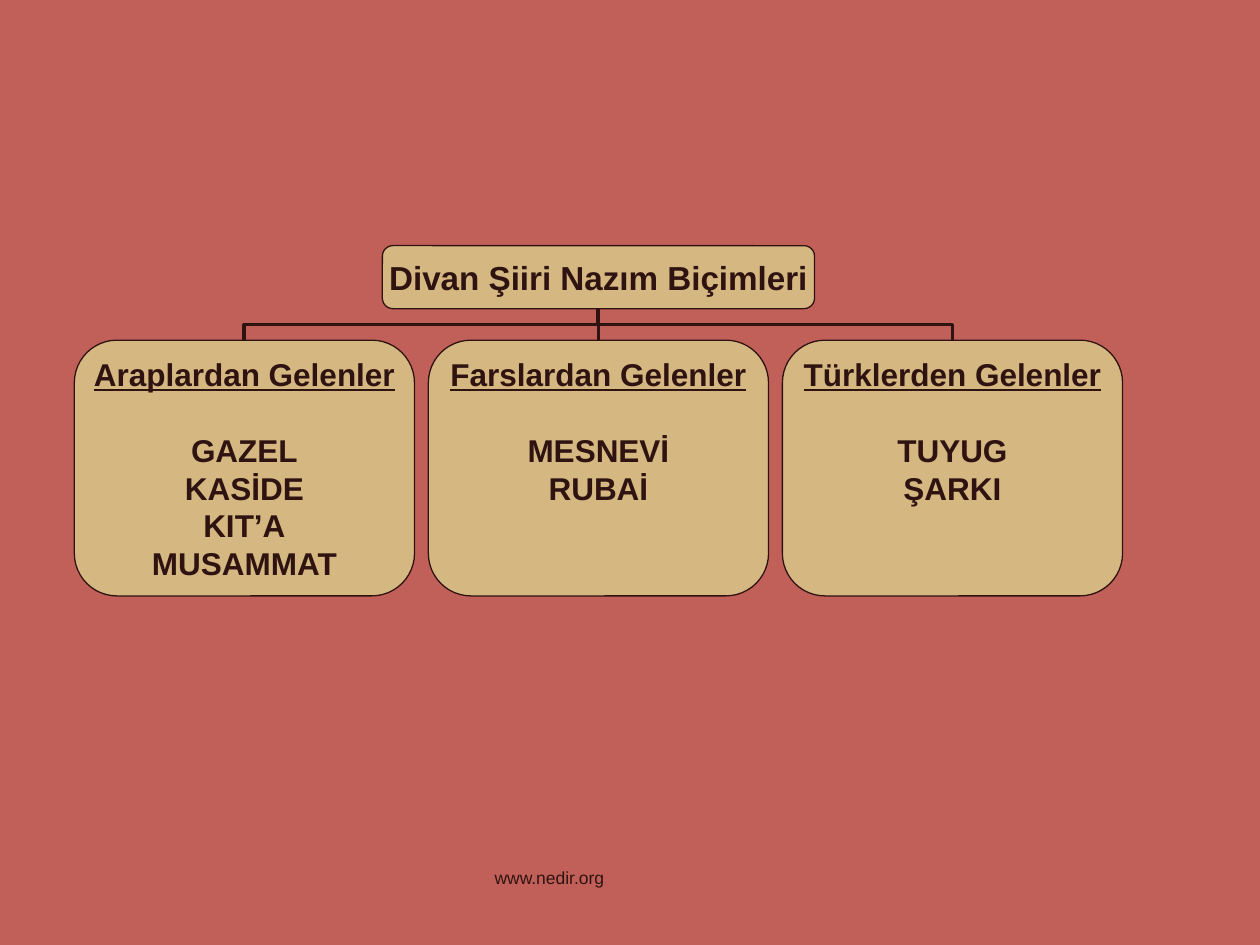
from lxml.etree import SubElement
from pptx import Presentation
from pptx.dml.color import RGBColor
from pptx.enum.shapes import MSO_CONNECTOR, MSO_SHAPE
from pptx.enum.text import MSO_ANCHOR, PP_ALIGN
from pptx.oxml.ns import qn
from pptx.util import Inches, Pt

INK = "2F1311"
SAND = "D5B781"
ROSE = "C16059"
LINE_PITCH = 21.6

BRANCHES = [
    ("Araplardan Gelenler", ["GAZEL", "KASİDE", "KIT’A", "MUSAMMAT"]),
    ("Farslardan Gelenler", ["MESNEVİ", "RUBAİ"]),
    ("Türklerden Gelenler", ["TUYUG", "ŞARKI"]),
]


def color(value):
    return RGBColor.from_string(value)


def write(para, text, size=18, bold=True, underline=False, pitch=None, before=None):
    para.alignment = PP_ALIGN.CENTER
    if pitch:
        para.line_spacing = Pt(pitch)
    if before:
        para.space_before = Pt(before)
    span = para.add_run()
    span.text = text
    span.font.name = "Arial"
    span.font.size = Pt(size)
    span.font.bold = bold
    span.font.underline = underline
    span.font.color.rgb = color(INK)


def add_card(shapes, left, top, width, height, anchor):
    card = shapes.add_shape(MSO_SHAPE.ROUNDED_RECTANGLE, Inches(left), Inches(top),
                            Inches(width), Inches(height))
    card.shadow.inherit = False
    card.fill.solid()
    card.fill.fore_color.rgb = color(SAND)
    card.line.color.rgb = color(INK)
    card.line.width = Pt(0.75)
    frame = card.text_frame
    frame.word_wrap = False
    frame.vertical_anchor = anchor
    frame.margin_left = frame.margin_right = Inches(0.02)
    frame.margin_top = frame.margin_bottom = Inches(0.01)
    return frame


def add_link(shapes, child_x, child_y, parent_x, parent_y):
    span_x, span_y = abs(parent_x - child_x), child_y - parent_y
    if span_x < 0.01:
        link = shapes.add_connector(MSO_CONNECTOR.STRAIGHT, Inches(child_x), Inches(child_y),
                                    Inches(parent_x), Inches(parent_y))
    else:
        middle_x, middle_y = (child_x + parent_x) / 2, (child_y + parent_y) / 2
        side = 1 if child_x > parent_x else -1
        link = shapes.add_connector(
            MSO_CONNECTOR.ELBOW,
            Inches(middle_x + side * span_y / 2), Inches(middle_y - span_x / 2),
            Inches(middle_x - side * span_y / 2), Inches(middle_y + span_x / 2))
        turn = 90 if side == 1 else 270
        link._element.spPr.find(qn("a:xfrm")).set("rot", str(turn * 60000))
    link.line.color.rgb = color(INK)
    link.line.width = Pt(2.25)
    SubElement(link._element.spPr, qn("a:effectLst"))


def add_branch(shapes, left, top, width, height, heading, forms):
    frame = add_card(shapes, left, top, width, height, MSO_ANCHOR.TOP)
    frame.margin_top = Inches(0.02)
    write(frame.paragraphs[0], heading, underline=True, pitch=LINE_PITCH)
    for index, form in enumerate(forms):
        write(frame.add_paragraph(), form, pitch=LINE_PITCH,
              before=LINE_PITCH if index == 0 else None)


def add_chart_tree(page, left, top, width):
    shapes = page.shapes.add_group_shape().shapes
    root_width, root_height = 3.43, 0.5
    card_width, card_height = 2.7, 2.03
    card_top = top + root_height + 0.25
    step = (width - card_width) / (len(BRANCHES) - 1)
    center = left + width / 2
    lefts = [left + index * step for index in range(len(BRANCHES))]
    for card_left in reversed(lefts):
        add_link(shapes, card_left + card_width / 2, card_top, center, top + root_height)
    root = add_card(shapes, center - root_width / 2, top, root_width, root_height,
                    MSO_ANCHOR.MIDDLE)
    write(root.paragraphs[0], "Divan Şiiri Nazım Biçimleri", size=19)
    for card_left, (heading, forms) in zip(lefts, BRANCHES):
        add_branch(shapes, card_left, card_top, card_width, card_height, heading, forms)


def add_footer(page, left, top, width, height):
    box = page.shapes.add_textbox(Inches(left), Inches(top), Inches(width), Inches(height))
    box.text_frame.word_wrap = True
    write(box.text_frame.paragraphs[0], "www.nedir.org", size=10, bold=False)


def main():
    deck = Presentation()
    deck.slide_width, deck.slide_height = Inches(10), Inches(7.5)
    page = deck.slides.add_slide(deck.slide_layouts[6])
    page.background.fill.solid()
    page.background.fill.fore_color.rgb = color(ROSE)
    add_chart_tree(page, 0.59, 1.95, 8.32)
    add_footer(page, 2.47, 6.83, 3.78, 0.52)
    deck.save("out.pptx")


if __name__ == "__main__":
    main()
